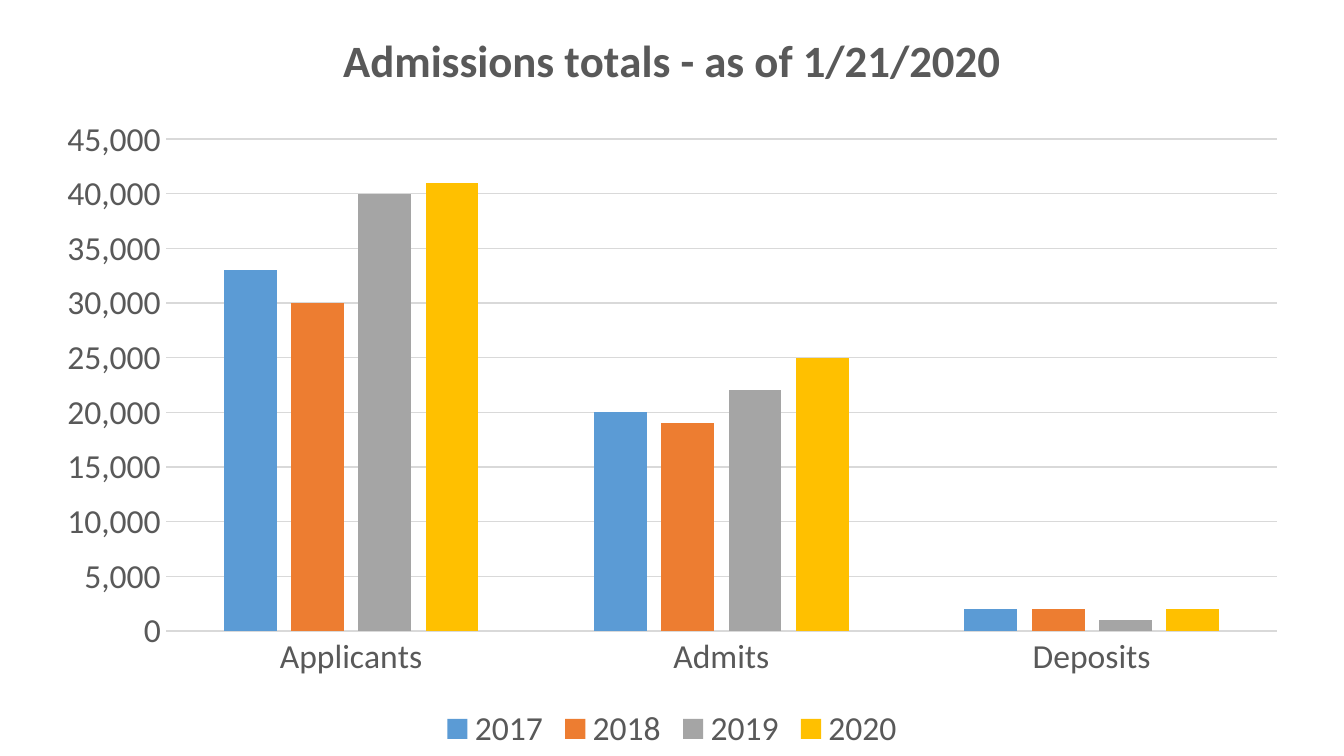
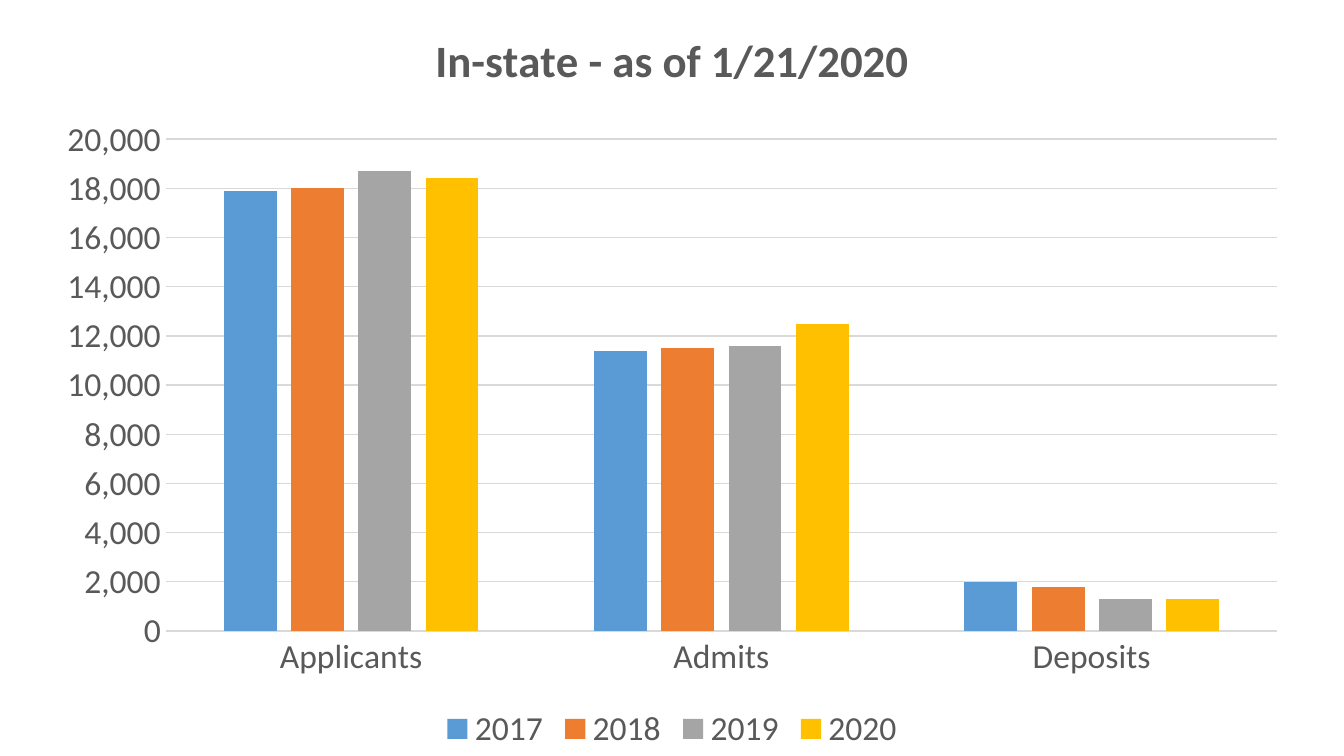
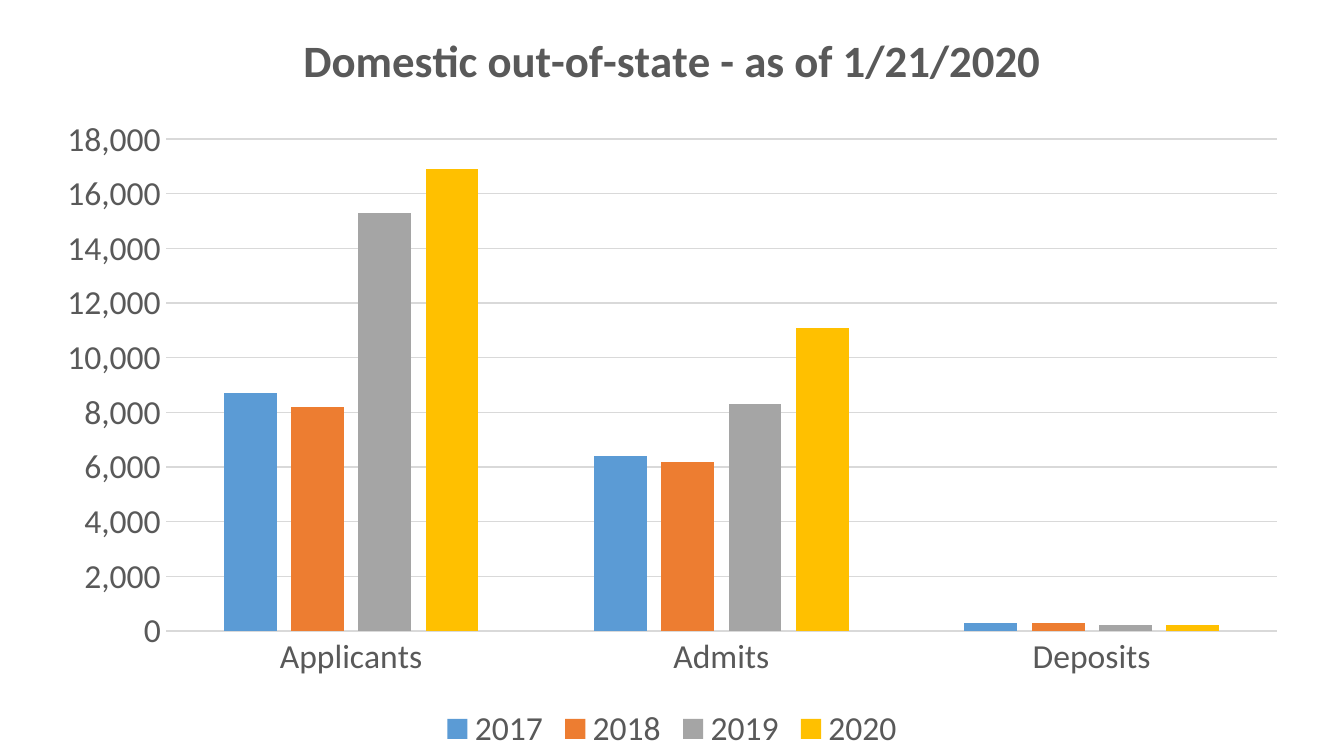
from pptx import Presentation
from pptx import util as u
from pptx.chart.data import CategoryChartData
from pptx.dml.color import RGBColor
from pptx.enum import chart as charts

FONT = "Calibri"
TEXT_GREY = "595959"
RULE_GREY = "D9D9D9"
STAGES = ("Applicants", "Admits", "Deposits")
YEAR_COLOURS = {"2017": "5B9BD5", "2018": "ED7D31", "2019": "A5A5A5", "2020": "FFC000"}
SLIDE_SIZE = (720, 405)
CHART_BOX = (22.5, 0, 675, 405)

ADMISSIONS = {
    "Admissions totals": (
        (33000, 20000, 2000),
        (30000, 19000, 2000),
        (40000, 22000, 1000),
        (41000, 25000, 2000),
    ),
    "In-state": (
        (17900, 11400, 2000),
        (18000, 11500, 1800),
        (18700, 11600, 1300),
        (18400, 12500, 1300),
    ),
    "Domestic out-of-state": (
        (8700, 6400, 300),
        (8200, 6200, 300),
        (15300, 8300, 200),
        (16900, 11100, 200),
    ),
}


def colour(hex_code):
    """Turn a hex string into a colour."""
    return RGBColor.from_string(hex_code)


def style_font(font, size=18, hex_code=TEXT_GREY, bold=False):
    """Apply the shared typeface with a size, colour and weight."""
    font.name = FONT
    font.size = u.Pt(size)
    font.bold = bold
    font.color.rgb = colour(hex_code)


def style_rule(line):
    """Draw a thin grey rule."""
    line.width = u.Pt(0.75)
    line.color.rgb = colour(RULE_GREY)


def add_chart_title(chart, heading):
    """Write the bold heading above the columns."""
    chart.has_title = True
    title = chart.chart_title
    title.include_in_layout = False
    run = title.text_frame.paragraphs[0].add_run()
    run.text = f"{heading} - as of 1/21/2020"
    style_font(run.font, 24, bold=True)


def style_axes(chart):
    """Format the stage axis, the count axis and its gridlines."""
    stage_axis, count_axis = chart.category_axis, chart.value_axis
    for axis in (stage_axis, count_axis):
        axis.major_tick_mark = charts.XL_TICK_MARK.NONE
        axis.minor_tick_mark = charts.XL_TICK_MARK.NONE
        style_font(axis.tick_labels.font)
    style_rule(stage_axis.format.line)
    count_axis.format.line.fill.background()
    count_axis.has_major_gridlines = True
    style_rule(count_axis.major_gridlines.format.line)
    count_axis.tick_labels.number_format = "#,##0"
    count_axis.tick_labels.number_format_is_linked = False


def style_columns(chart):
    """Space the columns and give each year its colour."""
    plot = chart.plots[0]
    plot.gap_width = 219
    plot.overlap = -27
    plot.vary_by_categories = False
    for year in plot.series:
        year.invert_if_negative = False
        year.format.fill.solid()
        year.format.fill.fore_color.rgb = colour(YEAR_COLOURS[year.name])


def add_legend(chart):
    """Place the year legend below the columns."""
    chart.has_legend = True
    chart.legend.position = charts.XL_LEGEND_POSITION.BOTTOM
    chart.legend.include_in_layout = False
    style_font(chart.legend.font)


def add_admissions_slide(deck, heading, counts, box=CHART_BOX):
    """Add a slide that compares admission stages by year in the given box."""
    slide = deck.slides.add_slide(deck.slide_layouts[6])
    figures = CategoryChartData(number_format="#,##0")
    figures.categories = STAGES
    for year, stage_counts in zip(YEAR_COLOURS, counts):
        figures.add_series(year, stage_counts)
    chart = slide.shapes.add_chart(
        charts.XL_CHART_TYPE.COLUMN_CLUSTERED, *map(u.Pt, box), figures
    ).chart
    style_font(chart.font, 10, "000000")
    add_chart_title(chart, heading)
    style_axes(chart)
    style_columns(chart)
    add_legend(chart)


def main():
    """Build and save the admissions deck."""
    deck = Presentation()
    deck.slide_width, deck.slide_height = map(u.Pt, SLIDE_SIZE)
    for heading, counts in ADMISSIONS.items():
        add_admissions_slide(deck, heading, counts)
    deck.save("out.pptx")


if __name__ == "__main__":
    main()
